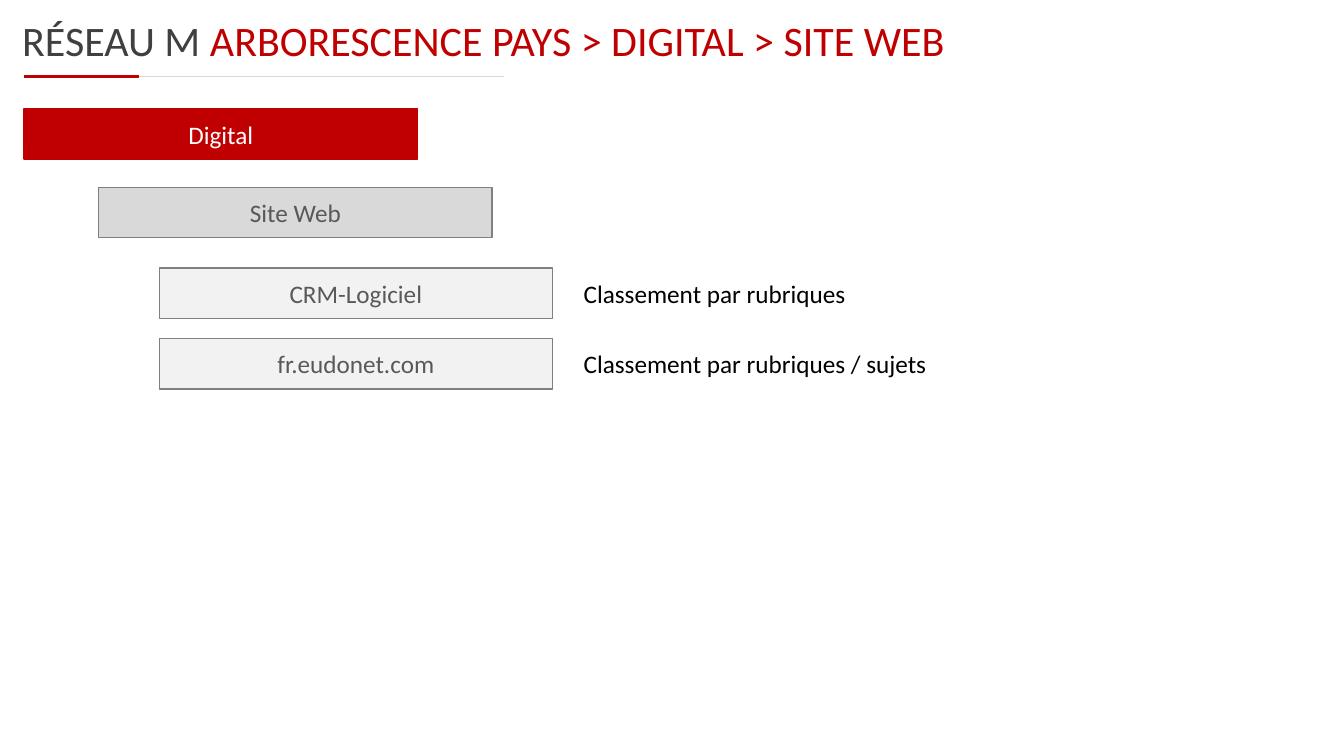
from dataclasses import dataclass

from lxml import etree
from pptx import Presentation
from pptx import util as u
from pptx.dml.color import RGBColor
from pptx.enum import shapes, text
from pptx.oxml.ns import qn


@dataclass(frozen=True)
class Theme:
    font: str = "Calibri"
    title_size: int = 30
    body_size: int = 18
    red: str = "C00000"
    white: str = "FFFFFF"
    black: str = "000000"
    title_grey: str = "404040"
    label_grey: str = "595959"
    border_grey: str = "808080"
    level_two_fill: str = "D9D9D9"
    level_three_fill: str = "F2F2F2"
    rule_grey: str = "D9D9D9"


THEME = Theme()
BOX_WIDTH, BOX_HEIGHT = 3.9, 0.5
NOTE_LEFT, NOTE_WIDTH, NOTE_HEIGHT = 5.69, 6.73, 0.4
RULE_TOP = 0.76


def rgb(color):
    return RGBColor.from_string(color)


def write(frame, *runs, size=THEME.body_size, align=text.PP_ALIGN.LEFT,
          anchor=text.MSO_ANCHOR.TOP, auto_size=text.MSO_AUTO_SIZE.NONE):
    """Fill the frame with one paragraph of (wording, color) runs."""
    frame.word_wrap = True
    frame.auto_size = auto_size
    frame.vertical_anchor = anchor
    paragraph = frame.paragraphs[0]
    paragraph.alignment = align
    for wording, color in runs:
        run = paragraph.add_run()
        run.text = wording
        run.font.name = THEME.font
        run.font.size = u.Pt(size)
        run.font.color.rgb = rgb(color)


def set_title(slide, *runs):
    title = slide.shapes.title
    title.left, title.top = u.Inches(0.12), u.Inches(0.09)
    title.width, title.height = u.Inches(12.72), u.Inches(1.49)
    write(title.text_frame, *runs, size=THEME.title_size)


def add_rule(slide, start, end, color, weight):
    rule = slide.shapes.add_connector(
        shapes.MSO_CONNECTOR.STRAIGHT, u.Inches(start), u.Inches(RULE_TOP),
        u.Inches(end), u.Inches(RULE_TOP))
    rule.line.color.rgb = rgb(color)
    rule.line.width = u.Pt(weight)
    etree.SubElement(rule._element.spPr, qn("a:effectLst"))


def add_box(slide, label, left, top, fill, border, color):
    box = slide.shapes.add_shape(
        shapes.MSO_SHAPE.RECTANGLE, u.Inches(left), u.Inches(top),
        u.Inches(BOX_WIDTH), u.Inches(BOX_HEIGHT))
    box.shadow.inherit = False
    box.fill.solid()
    box.fill.fore_color.rgb = rgb(fill)
    box.line.color.rgb = rgb(border)
    box.line.width = u.Pt(1)
    write(box.text_frame, (label, color), align=text.PP_ALIGN.CENTER,
          anchor=text.MSO_ANCHOR.MIDDLE)


def add_note(slide, wording, box_top):
    """Place a note beside a box, centred on its height."""
    top = box_top + (BOX_HEIGHT - NOTE_HEIGHT) / 2
    note = slide.shapes.add_textbox(
        u.Inches(NOTE_LEFT), u.Inches(top),
        u.Inches(NOTE_WIDTH), u.Inches(NOTE_HEIGHT))
    write(note.text_frame, (wording, THEME.black),
          auto_size=text.MSO_AUTO_SIZE.SHAPE_TO_FIT_TEXT)


def main():
    deck = Presentation()
    deck.slide_width, deck.slide_height = u.Inches(13.33), u.Inches(7.5)
    slide = deck.slides.add_slide(deck.slide_layouts.get_by_name("Title Only"))

    set_title(slide, ("RÉSEAU M ", THEME.title_grey),
              ("ARBORESCENCE PAYS > DIGITAL > SITE WEB", THEME.red))
    add_rule(slide, 1.38, 5, THEME.rule_grey, 0.25)
    add_rule(slide, 0.24, 1.38, THEME.red, 2.5)

    add_box(slide, "Digital", 0.24, 1.08, THEME.red, THEME.red, THEME.white)
    add_box(slide, "Site Web", 0.98, 1.86, THEME.level_two_fill,
            THEME.border_grey, THEME.label_grey)

    sources = [("CRM-Logiciel", "Classement par rubriques"),
               ("fr.eudonet.com", "Classement par rubriques / sujets")]
    for row, (source, sorting) in enumerate(sources):
        top = 2.66 + row * 0.7
        add_box(slide, source, 1.58, top, THEME.level_three_fill,
                THEME.border_grey, THEME.label_grey)
        add_note(slide, sorting, top)

    deck.save("out.pptx")


if __name__ == "__main__":
    main()
